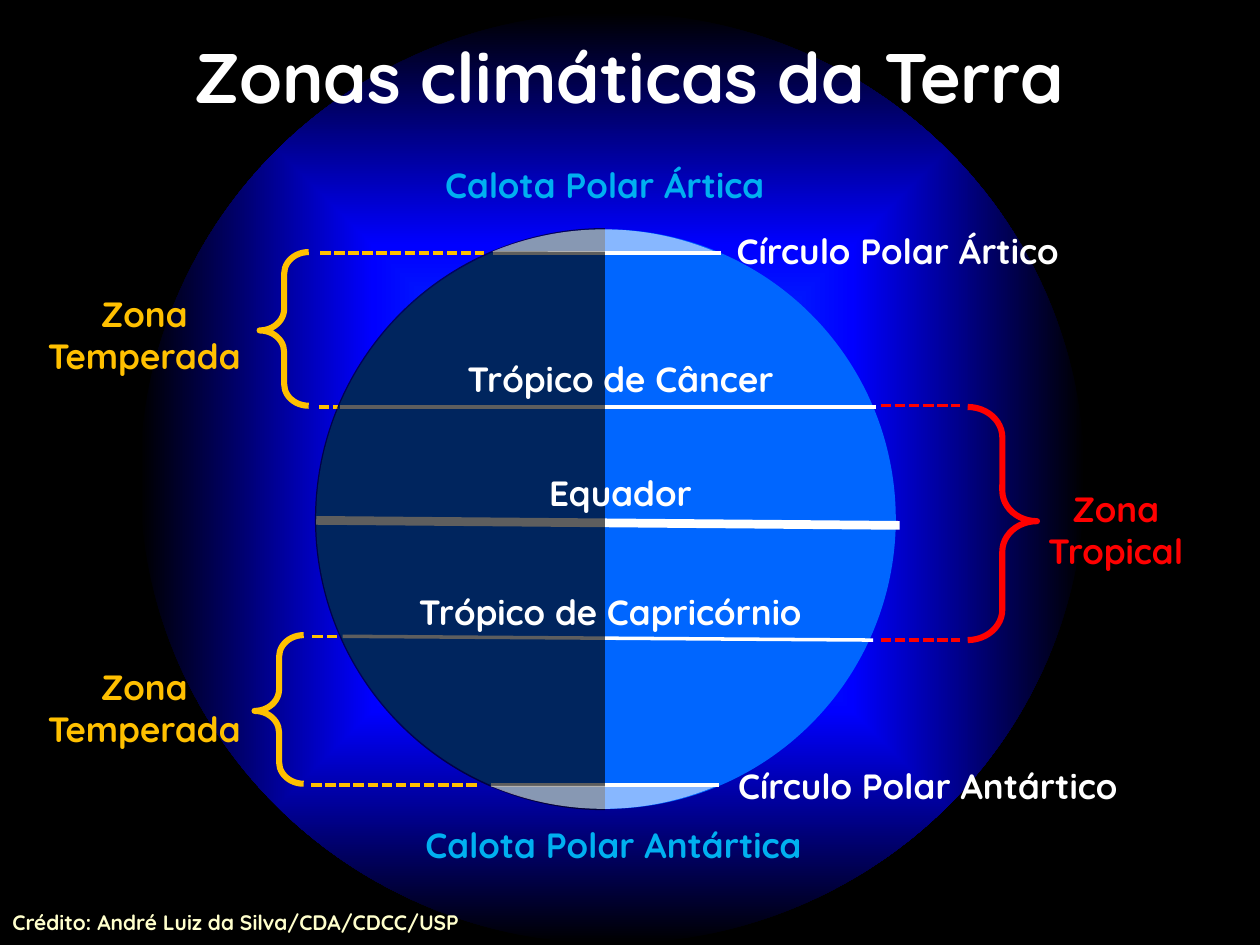
from lxml.etree import SubElement
from pptx import Presentation
from pptx.dml.color import RGBColor
from pptx.enum.dml import MSO_LINE
from pptx.enum.shapes import MSO_CONNECTOR, MSO_SHAPE as SHAPE
from pptx.enum.text import MSO_ANCHOR, MSO_AUTO_SIZE as AUTO_SIZE, PP_ALIGN as ALIGN
from pptx.oxml import parse_xml
from pptx.oxml.ns import nsdecls, qn
from pptx.util import Pt

PX = 9144  # 100 px to the inch
COLORS = {
    "black": "000000", "white": "FFFFFF", "sea": "0066FF", "glow": "0000FF",
    "temperate": "FFC000", "tropical": "FF0000", "polar": "00B0F0", "credit": "FFFFCC",
}


def rgb(name):
    return RGBColor.from_string(COLORS[name])


def format_text(box, text, color, size, align):
    frame = box.text_frame
    frame.word_wrap = True
    frame.text = text
    para = frame.paragraphs[0]
    para.alignment = align
    font = para.runs[0].font
    font.name, font.size, font.bold = "Quicksand", Pt(size), True
    font.color.rgb = rgb(color)


deck = Presentation()
deck.slide_width, deck.slide_height = 1000 * PX, 750 * PX
page = deck.slides.add_slide(deck.slide_layouts[5])
page.background.fill.solid()
page.background.fill.fore_color.rgb = rgb("black")

# Halo around the globe
halo = page.shapes.add_shape(SHAPE.OVAL, 111 * PX, 10 * PX, 750 * PX, 739 * PX)
halo.shadow.inherit = False
halo.line.fill.background()
stops = "".join(
    f'<a:gs pos="{position}000"><a:srgbClr val="{COLORS[name]}"/></a:gs>'
    for position, name in ((0, "sea"), (50, "glow"), (100, "black"))
)
gradient = parse_xml(
    f'<a:gradFill {nsdecls("a")} rotWithShape="1"><a:gsLst>{stops}</a:gsLst>'
    '<a:path path="shape"><a:fillToRect l="50000" t="50000" r="50000" b="50000"/></a:path>'
    '</a:gradFill>'
)
halo.element.spPr.find(qn("a:prstGeom")).addnext(gradient)

globe = page.shapes.add_shape(SHAPE.OVAL, 251 * PX, 182 * PX, 460 * PX, 460 * PX)
globe.shadow.inherit = False
globe.fill.solid()
globe.fill.fore_color.rgb = rgb("sea")
globe.line.fill.background()

# Parallels first, then the night side and polar caps that tint them, then the dashes
parallels = [
    (251, 413, 714, 417, "white", 5, False),
    (270, 323, 695, 323, "white", 2, False),
    (272, 505, 693, 508, "white", 2, False),
    (391, 201, 572, 201, "white", 2, False),
    (390, 623, 571, 623, "white", 2, False),
]
dashes = [
    (254, 201, 384, 201, "temperate", 2, True),
    (253, 323, 268, 323, "temperate", 2, True),
    (248, 505, 268, 505, "temperate", 2, True),
    (247, 623, 381, 623, "temperate", 2, True),
    (699, 322, 762, 322, "tropical", 2, True),
    (699, 508, 762, 508, "tropical", 2, True),
]
for x1, y1, x2, y2, color, weight, dashed in parallels + dashes:
    line = page.shapes.add_connector(MSO_CONNECTOR.STRAIGHT, x1 * PX, y1 * PX, x2 * PX, y2 * PX)
    line.line.color.rgb = rgb(color)
    line.line.width = Pt(weight)
    if dashed:
        line.line.dash_style = MSO_LINE.SQUARE_DOT
    SubElement(line.element.spPr, qn("a:effectLst"))

# Chord angles are in units of 100000/60000 degree
chords = [
    (250, 181, 462, 0, 54, 162, "black", 63),
    (249, 182, 460, 0, 40.23, 67.78, "white", 53),
    (249, 182, 460, 180, 40.46, 67.78, "white", 53),
]
for left, top, height, rotation, start, end, color, opacity in chords:
    chord = page.shapes.add_shape(SHAPE.CHORD, left * PX, top * PX, 460 * PX, height * PX)
    chord.shadow.inherit = False
    chord.rotation = rotation
    chord.adjustments[0], chord.adjustments[1] = start, end
    chord.line.fill.background()
    chord.fill.solid()
    chord.fill.fore_color.rgb = rgb(color)
    tint = chord.element.spPr.find(qn("a:solidFill"))[0]
    SubElement(tint, qn("a:alpha"), val=f"{opacity}000")

braces = [
    (768, 323, 55, 185, 0, "tropical"),
    (206, 200, 39, 122, 180, "temperate"),
    (202, 504, 39, 118, 180, "temperate"),
]
for left, top, width, height, rotation, color in braces:
    brace = page.shapes.add_shape(SHAPE.RIGHT_BRACE, left * PX, top * PX, width * PX, height * PX)
    brace.shadow.inherit = False
    brace.rotation = rotation
    brace.adjustments[0], brace.adjustments[1] = 0.44, 0.49
    brace.fill.background()
    brace.line.color.rgb = rgb(color)
    brace.line.width = Pt(3.5)

labels = [
    ("Trópico de Câncer", 264, 279, 457, 44, "white", 20, ALIGN.CENTER),
    ("Trópico de Capricórnio", 256, 464, 457, 44, "white", 20, ALIGN.CENTER),
    ("Equador", 264, 369, 457, 44, "white", 20, ALIGN.CENTER),
    ("Círculo Polar Ártico", 484, 177, 457, 44, "white", 20, ALIGN.CENTER),
    ("Círculo Polar Antártico", 508, 602, 457, 44, "white", 20, ALIGN.CENTER),
    ("Zona Tropical", 791, 382, 189, 77, "tropical", 20, ALIGN.CENTER),
    ("Zona Temperada", 20, 227, 189, 77, "temperate", 20, ALIGN.CENTER),
    ("Zona Temperada", 20, 523, 189, 77, "temperate", 20, ALIGN.CENTER),
    ("Calota Polar Antártica", 310, 649, 354, 44, "polar", 20, ALIGN.CENTER),
    ("Calota Polar Ártica", 303, 125, 354, 44, "polar", 20, ALIGN.CENTER),
    ("Crédito: André Luiz da Silva/CDA/CDCC/USP", 0, 717, 1028, 30, "credit", 12, ALIGN.LEFT),
]
for text, left, top, width, height, color, size, align in labels:
    label = page.shapes.add_textbox(left * PX, top * PX, width * PX, height * PX)
    format_text(label, text, color, size, align)
    label.text_frame.auto_size = AUTO_SIZE.SHAPE_TO_FIT_TEXT

# The title goes in front of the halo
title = page.shapes.title
title.left, title.top, title.width, title.height = 43 * PX, 5 * PX, 913 * PX, 110 * PX
format_text(title, "Zonas climáticas da Terra", "white", 40, ALIGN.CENTER)
title.text_frame.vertical_anchor = MSO_ANCHOR.MIDDLE
title.text_frame.auto_size = AUTO_SIZE.NONE
title.element.getparent().append(title.element)

deck.save("out.pptx")
